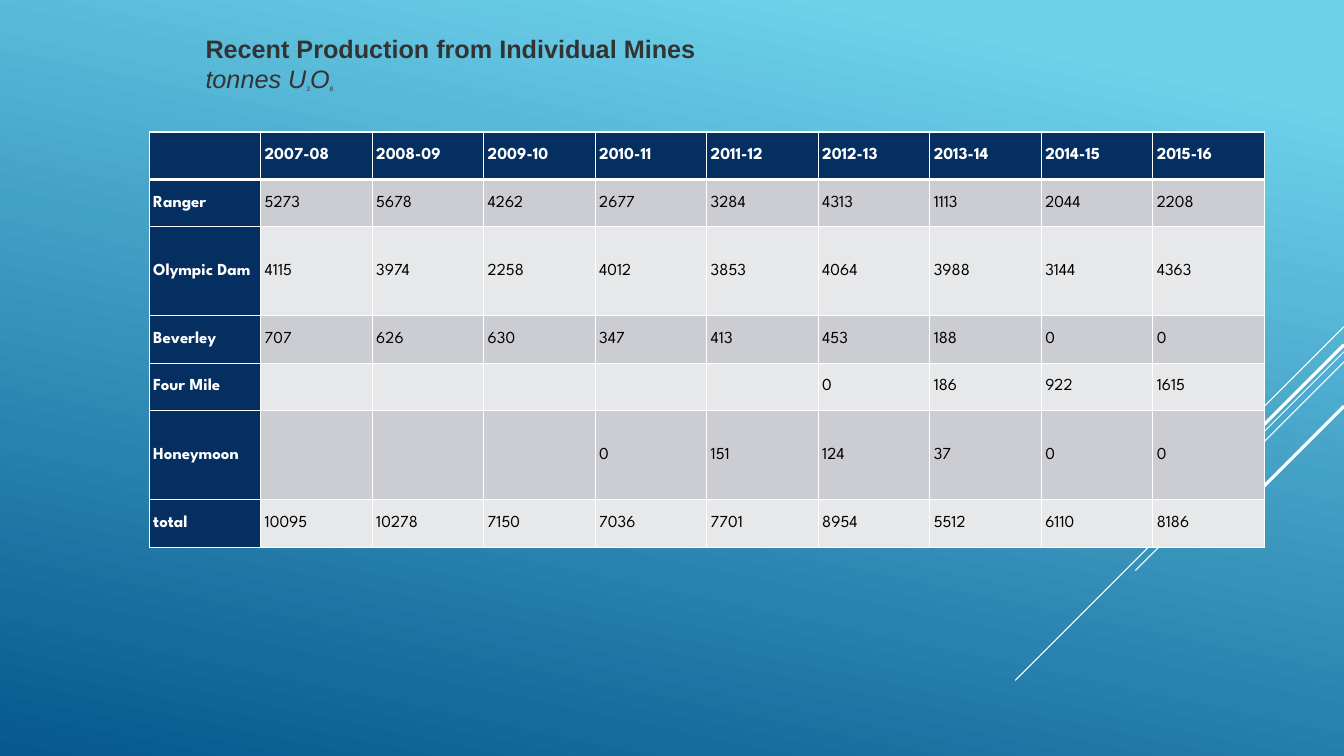
from lxml import etree
from pptx import Presentation
from pptx.dml.color import RGBColor
from pptx.enum.shapes import MSO_CONNECTOR
from pptx.enum.text import MSO_ANCHOR
from pptx.oxml import parse_xml
from pptx.oxml.ns import nsdecls, qn
from pptx.util import Inches, Pt

STRAIGHT = MSO_CONNECTOR.STRAIGHT
MIDDLE = MSO_ANCHOR.MIDDLE
W, H = 13.33, 7.5
COLORS = {
    "sky": "6ED2EB", "deep": "06588E", "title": "333333", "header": "052F61",
    "odd": "CCCDD2", "even": "E7E8EA", "white": "FFFFFF", "black": "000000",
}


def rgb(name):
    return RGBColor.from_string(COLORS[name])


def set_font(font, color, **values):
    font.color.rgb = rgb(color)
    for name, value in values.items():
        setattr(font, name, value)


prs = Presentation()
prs.slide_width, prs.slide_height = Inches(W), Inches(H)
s = prs.slides.add_slide(prs.slide_layouts[6])

# Background gradient
bg = s.background.fill
bg.gradient()
bg.gradient_angle = 360 - 102
for stop, (color, position) in zip(bg.gradient_stops, [("sky", 0.1), ("deep", 1)]):
    stop.color.rgb = rgb(color)
    stop.position = position

# Diagonal lines from the right edge, all at 45 degrees: start, run, width
for y, run, width in [(3.24, 1, 0.75), (3.49, 3.26, 0.75), (3.59, 2.07, 0.75),
                      (3.42, 1.91, 2.25), (4.03, 1.39, 2.25)]:
    c = s.shapes.add_connector(STRAIGHT, Inches(W), Inches(y), Inches(W - run), Inches(y + run))
    c.line.color.rgb = rgb("white")
    c.line.width = Pt(width)
    etree.SubElement(c._element.spPr, qn("a:effectLst"))

# Title with chemical formula
tf = s.shapes.add_textbox(Inches(1.94), Inches(0.28), Inches(8.4), Inches(0.73)).text_frame
tf.word_wrap = True
p = tf.paragraphs[0]
p.space_after = Pt(5.8)
r = p.add_run()
r.text = "Recent Production from Individual Mines"
set_font(r.font, "title", name="Arial", size=Pt(18), bold=True)
p.add_line_break()
for text, subscript in [("tonnes U", False), ("3", True), ("O", False), ("8", True)]:
    r = p.add_run()
    r.text = text
    set_font(r.font, "title", name="Arial", size=Pt(8 if subscript else 18),
             bold=False, italic=True)
    if subscript:
        r._r.get_or_add_rPr().set("baseline", "-25000")

# Production figures; None leaves a cell empty
mines = {
    "Ranger": [5273, 5678, 4262, 2677, 3284, 4313, 1113, 2044, 2208],
    "Olympic Dam": [4115, 3974, 2258, 4012, 3853, 4064, 3988, 3144, 4363],
    "Beverley": [707, 626, 630, 347, 413, 453, 188, 0, 0],
    "Four Mile": [None] * 5 + [0, 186, 922, 1615],
    "Honeymoon": [None] * 3 + [0, 151, 124, 37, 0, 0],
}
years = [f"{year}-{year - 1999:02d}" for year in range(2007, 2016)]
totals = [sum(v or 0 for v in column) for column in zip(*mines.values())]
rows = [[None] + years]
rows += [[mine] + values for mine, values in mines.items()]
rows.append(["total"] + totals)

# Table grid
col_w, row_h, tall_h = 1.106, 0.47, 0.885
heights = [tall_h if row[0] in ("Olympic Dam", "Honeymoon") else row_h for row in rows]
table = s.shapes.add_table(len(rows), len(rows[0]), Inches(1.48), Inches(1.31),
                           Inches(col_w * len(rows[0])), Inches(sum(heights))).table
for column in table.columns:
    column.width = Inches(col_w)
for row, height in zip(table.rows, heights):
    row.height = Inches(height)

# Table cells
margins = {"margin_left": 0.04, "margin_right": 0.04, "margin_top": 0.02, "margin_bottom": 0.02}
for i, row in enumerate(rows):
    for j, value in enumerate(row):
        cell = table.cell(i, j)
        heading = i == 0 or j == 0
        for name, inches in margins.items():
            setattr(cell, name, Inches(inches))
        cell.vertical_anchor = MIDDLE
        for side in "LRTB":
            thick = (i, side) in [(0, "B"), (1, "T")]
            cell._tc.get_or_add_tcPr().append(parse_xml(
                f'<a:ln{side} {nsdecls("a")} w="{Pt(3 if thick else 1)}"><a:solidFill>'
                f'<a:srgbClr val="{COLORS["white"]}"/></a:solidFill></a:ln{side}>'))
        cell.fill.solid()
        cell.fill.fore_color.rgb = rgb("header" if heading else "odd" if i % 2 else "even")
        if value is not None:
            r = cell.text_frame.paragraphs[0].add_run()
            r.text = str(value)
            set_font(r.font, "white" if heading else "black", name="League Spartan",
                     size=Pt(12), bold=heading)

prs.save("out.pptx")
